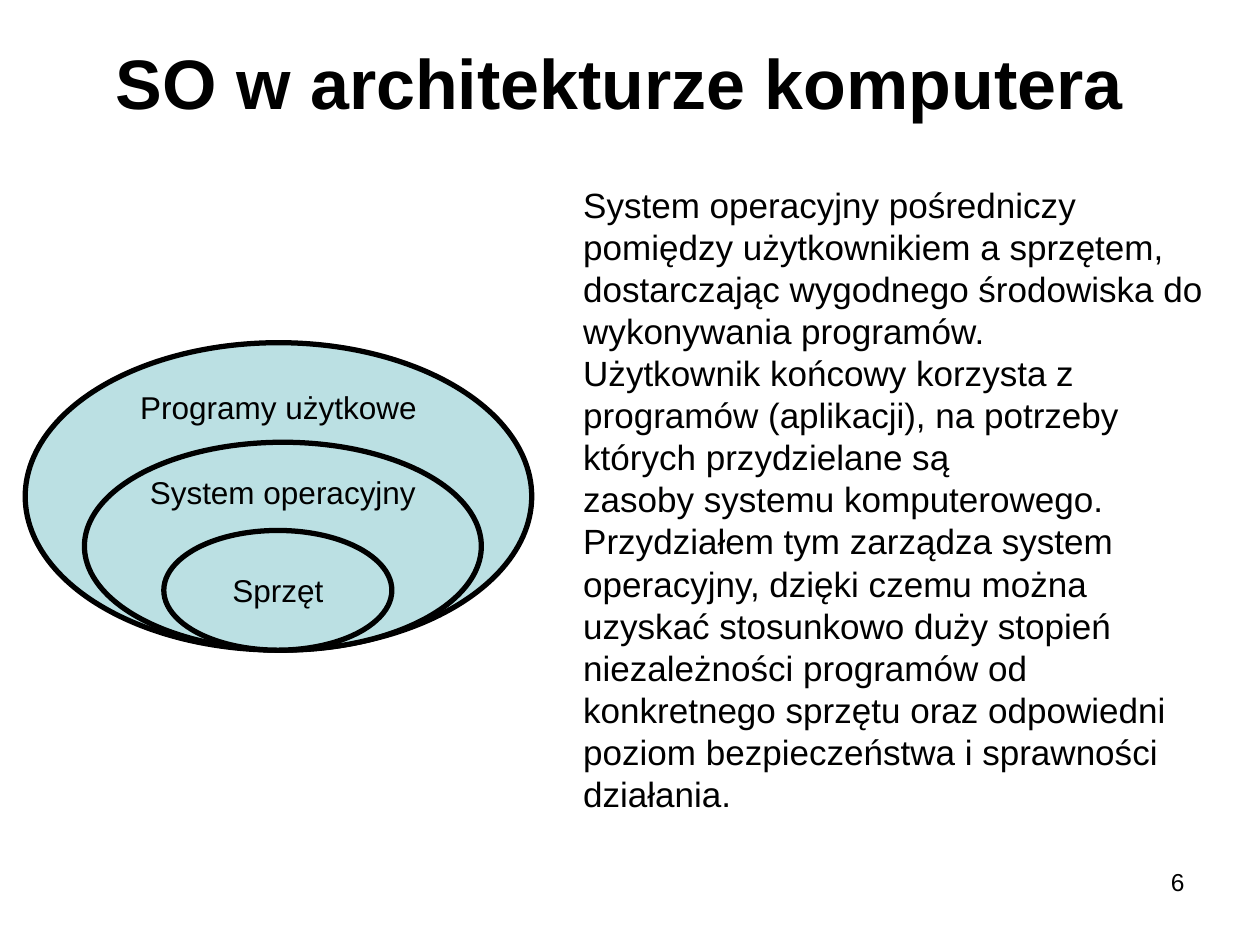
from pptx import Presentation
from pptx.dml.color import RGBColor
from pptx.enum.shapes import MSO_SHAPE
from pptx.enum.text import MSO_ANCHOR, PP_ALIGN
from pptx.util import Inches, Pt

THEME = {
    "font": "Arial",
    "ink": RGBColor(0x00, 0x00, 0x00),
    "fill": RGBColor(0xBB, 0xE0, 0xE3),
    "line": 3,
    "title": 40,
    "body": 20,
    "label": 18,
    "number": 14,
}

TITLE = "SO w architekturze komputera"
NUMBER = "6"
BODY = [
    "System operacyjny pośredniczy pomiędzy użytkownikiem a sprzętem,",
    "dostarczając wygodnego środowiska do wykonywania programów.",
    "Użytkownik końcowy korzysta z programów (aplikacji), na potrzeby "
    "których przydzielane są",
    "zasoby systemu komputerowego. Przydziałem tym zarządza system "
    "operacyjny, dzięki czemu można uzyskać stosunkowo duży stopień "
    "niezależności programów od konkretnego sprzętu oraz odpowiedni "
    "poziom bezpieczeństwa i sprawności",
    "działania.",
]
LAYERS_BOTTOM = 5.16
LAYERS = [
    ("Programy użytkowe", 0.2, 4.02, 2.44, MSO_ANCHOR.TOP),
    ("System operacyjny", 0.67, 3.15, 1.65, MSO_ANCHOR.TOP),
    ("Sprzęt", 1.3, 1.81, 0.95, MSO_ANCHOR.MIDDLE),
]


def write(tf, lines, size, align=PP_ALIGN.LEFT, bold=False):
    for i, line in enumerate(lines):
        p = tf.add_paragraph() if i else tf.paragraphs[0]
        p.text = line
        p.alignment = align
        p.font.name = THEME["font"]
        p.font.size = Pt(THEME[size])
        p.font.bold = bold
        p.font.color.rgb = THEME["ink"]


def add_text(s, box, lines, size, anchor=MSO_ANCHOR.TOP, **style):
    tf = s.shapes.add_textbox(*map(Inches, box)).text_frame
    tf.word_wrap = True
    tf.vertical_anchor = anchor
    write(tf, lines, size, **style)


def add_layer(s, label, left, width, height, anchor):
    box = (left, LAYERS_BOTTOM - height, width, height)
    sp = s.shapes.add_shape(MSO_SHAPE.OVAL, *map(Inches, box))
    sp.shadow.inherit = False
    sp.fill.solid()
    sp.fill.fore_color.rgb = THEME["fill"]
    sp.line.color.rgb = THEME["ink"]
    sp.line.width = Pt(THEME["line"])
    tf = sp.text_frame
    tf.word_wrap = False
    tf.vertical_anchor = anchor
    tf.margin_top = tf.margin_bottom = 0
    write(tf, [label], "label", PP_ALIGN.CENTER)


def main():
    prs = Presentation()
    prs.slide_width, prs.slide_height = Inches(10), Inches(7.5)
    s = prs.slides.add_slide(prs.slide_layouts[6])
    add_text(s, (7.17, 6.83, 2.33, 0.52), [NUMBER], "number", align=PP_ALIGN.RIGHT)
    add_text(s, (0.5, 0.3, 8.83, 0.69), [TITLE], "title", MSO_ANCHOR.MIDDLE,
             align=PP_ALIGN.CENTER, bold=True)
    for layer in LAYERS:
        add_layer(s, *layer)
    add_text(s, (4.53, 1.41, 5.28, 5.1), BODY, "body")
    prs.save("out.pptx")


if __name__ == "__main__":
    main()
